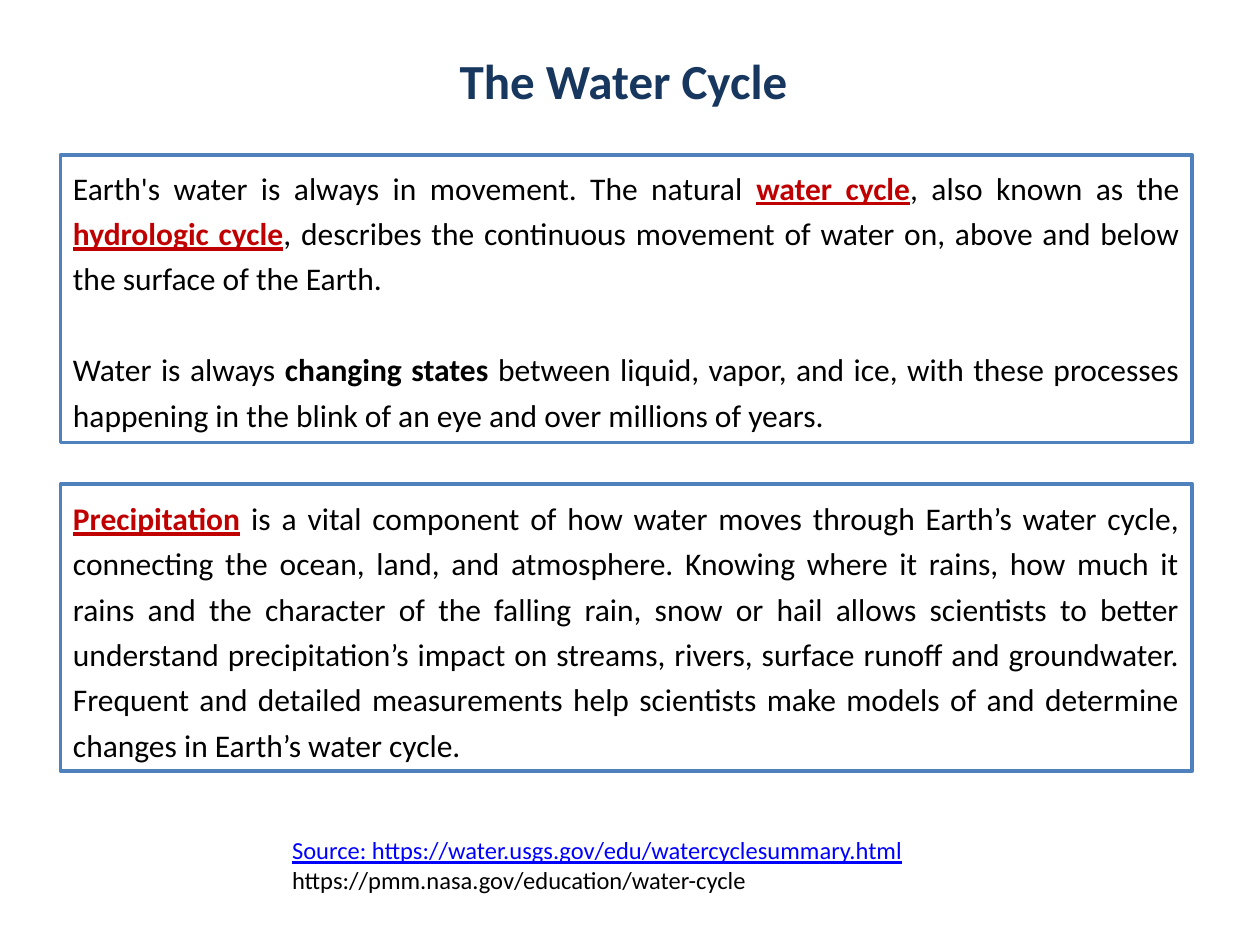
from pptx import Presentation
from pptx.dml.color import RGBColor
from pptx.enum.shapes import MSO_SHAPE
from pptx.enum.text import MSO_ANCHOR, MSO_AUTO_SIZE, PP_ALIGN
from pptx.util import Pt

RECT = MSO_SHAPE.RECTANGLE
TOP, MIDDLE = MSO_ANCHOR.TOP, MSO_ANCHOR.MIDDLE
LEFT, JUSTIFY = PP_ALIGN.LEFT, PP_ALIGN.JUSTIFY
GROW = MSO_AUTO_SIZE.SHAPE_TO_FIT_TEXT

NAVY, BLUE, RED = "17375E", "4F81BD", "C00000"
BLACK, WHITE, LINK = "000000", "FFFFFF", "0000FF"


def rgb(value):
    return RGBColor.from_string(value)


def run(text, color=BLACK, bold=False, underline=False):
    return {"text": text, "color": color, "bold": bold, "underline": underline}


def term(text):
    return run(text, color=RED, bold=True, underline=True)


class SlideBuilder:
    font = "Calibri"

    def __init__(self, s):
        self.s = s

    def fill_text(self, tf, paragraphs, size, align=LEFT, spacing=None, gap=0):
        for i, runs in enumerate(paragraphs):
            p = tf.add_paragraph() if i else tf.paragraphs[0]
            p.alignment = align
            if spacing:
                p.line_spacing = spacing
            if i and gap:
                p.space_before = Pt(gap)
            for item in runs:
                r = p.add_run()
                r.text = item["text"]
                r.font.name = self.font
                r.font.size = Pt(size)
                r.font.bold = item["bold"]
                r.font.underline = item["underline"]
                r.font.color.rgb = rgb(item["color"])

    def label(self, x, y, w, h, paragraphs, size):
        sp = self.s.shapes.add_textbox(Pt(x), Pt(y), Pt(w), Pt(h))
        tf = sp.text_frame
        tf.word_wrap = False
        tf.auto_size = GROW
        self.fill_text(tf, paragraphs, size)

    def panel(self, x, y, w, h, paragraphs, anchor=TOP):
        sp = self.s.shapes.add_shape(RECT, Pt(x), Pt(y), Pt(w), Pt(h))
        sp.shadow.inherit = False
        sp.fill.solid()
        sp.fill.fore_color.rgb = rgb(WHITE)
        sp.line.color.rgb = rgb(BLUE)
        sp.line.width = Pt(2)
        tf = sp.text_frame
        tf.word_wrap = True
        tf.auto_size = GROW
        tf.vertical_anchor = anchor
        self.fill_text(tf, paragraphs, 18, align=JUSTIFY, spacing=1.2, gap=26)


def main():
    prs = Presentation()
    prs.slide_width, prs.slide_height = Pt(720), Pt(540)
    slide = SlideBuilder(prs.slides.add_slide(prs.slide_layouts[6]))

    slide.label(255.6, 25.2, 204.5, 41,
                [[run("The Water Cycle", color=NAVY, bold=True)]], 28)

    cycle = [
        [run("Earth's water is always in movement. The natural "),
         term("water cycle"),
         run(", also known as the "),
         term("hydrologic cycle"),
         run(", describes the continuous movement of water on, above and "
             "below the surface of the Earth. ")],
        [run("Water is always "),
         run("changing states", bold=True),
         run(" between liquid, vapor, and ice, with these processes "
             "happening in the blink of an eye and over millions of years.")],
    ]
    precipitation = [
        [term("Precipitation"),
         run(" is a vital component of how water moves through Earth’s water "
             "cycle, connecting the ocean, land, and atmosphere. Knowing where "
             "it rains, how much it rains and the character of the falling "
             "rain, snow or hail allows scientists to better understand "
             "precipitation’s impact on streams, rivers, surface runoff and "
             "groundwater. Frequent and detailed measurements help scientists "
             "make models of and determine changes in Earth’s water cycle. ")],
    ]
    slide.panel(34.6, 88.6, 646.6, 164.2, cycle)
    slide.panel(34.6, 276.5, 646.6, 164.2, precipitation, anchor=MIDDLE)

    sources = [
        [run("Source: https://water.usgs.gov/edu/watercyclesummary.html",
             color=LINK, underline=True)],
        [run("https://pmm.nasa.gov/education/water-cycle")],
    ]
    slide.label(159.8, 473.8, 366.5, 41, sources, 14)

    prs.save("out.pptx")


if __name__ == "__main__":
    main()
